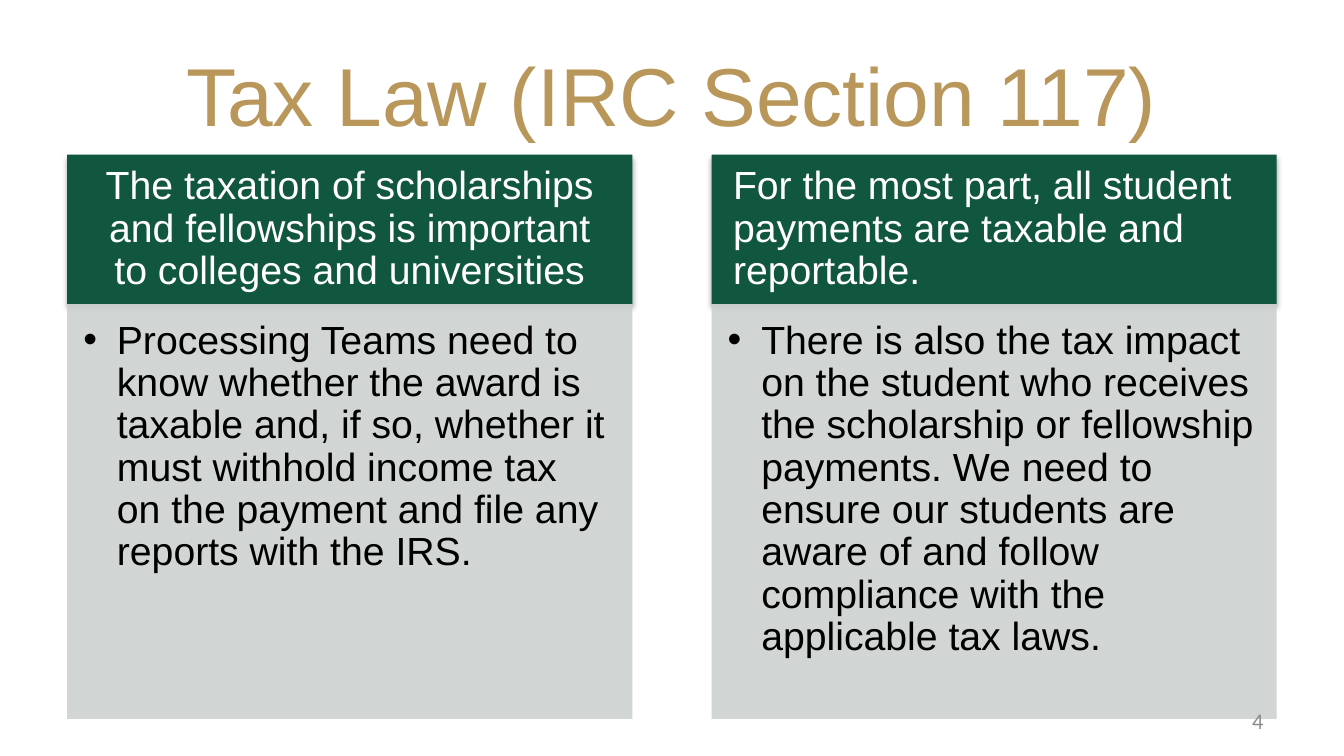
from collections import namedtuple

from lxml.etree import SubElement
from pptx import Presentation
from pptx.dml.color import RGBColor
from pptx.enum.shapes import MSO_SHAPE
from pptx.enum.text import MSO_ANCHOR, PP_ALIGN
from pptx.oxml.ns import qn
from pptx.util import Inches, Pt

Box = namedtuple("Box", "left top width height")

SLIDE_WIDTH = 10
SLIDE_HEIGHT = SLIDE_WIDTH * 9 / 16
MARGIN = 0.05 * SLIDE_WIDTH
CONTENT_WIDTH = SLIDE_WIDTH - 2 * MARGIN
GAP_SHARE = 0.14  # gap between columns, as a share of a column's width
COLUMN_WIDTH = CONTENT_WIDTH / (2 + GAP_SHARE)
COLUMN_STEP = COLUMN_WIDTH * (1 + GAP_SHARE)
COLUMN_TOP, COLUMN_HEIGHT = 1.15, 4.2
HEADING_SHARE = 0.265

GOLD, GREEN, PALE, GRAY = "B9975B", "115740", "CCD1CF", "8C8C8C"
WHITE, BLACK = "FFFFFF", "000000"

COLUMNS = [
    ("The taxation of scholarships and fellowships is important to colleges and universities",
     PP_ALIGN.CENTER,
     "Processing Teams need to know whether the award is taxable and, if so, whether it must "
     "withhold income tax on the payment and file any reports with the IRS."),
    ("For the most part, all student payments are taxable and reportable.",
     PP_ALIGN.LEFT,
     "There is also the tax impact on the student who receives the scholarship or fellowship "
     "payments. We need to ensure our students are aware of and follow compliance with the "
     "applicable tax laws."),
]


def color(hex_string):
    return RGBColor.from_string(hex_string)


def inches(box):
    return [Inches(length) for length in box]


def write(shape, text, size, hex_color, alignment, font="Arial",
          anchor=MSO_ANCHOR.MIDDLE, insets=(0.1, 0.05, 0.1, 0.05)):
    """Fill the shape with one styled paragraph and return that paragraph."""
    frame = shape.text_frame
    frame.text = text
    frame.word_wrap = True
    frame.vertical_anchor = anchor
    (frame.margin_left, frame.margin_top,
     frame.margin_right, frame.margin_bottom) = inches(insets)
    paragraph = frame.paragraphs[0]
    paragraph.alignment = alignment
    run_font = paragraph.runs[0].font
    run_font.name, run_font.size = font, Pt(size)
    run_font.color.rgb = color(hex_color)
    return paragraph


def add_panel(slide, box, fill):
    panel = slide.shapes.add_shape(MSO_SHAPE.RECTANGLE, *inches(box))
    panel.shadow.inherit = False
    panel.fill.solid()
    panel.fill.fore_color.rgb = color(fill)
    panel.line.fill.background()
    return panel


def add_soft_shadow(shape):
    effects = shape.element.spPr.find(qn("a:effectLst"))
    shadow = SubElement(effects, qn("a:outerShdw"), blurRad=str(Pt(3.1)), dist=str(Pt(1.8)),
                        dir="5400000", rotWithShape="0")
    shadow_color = SubElement(shadow, qn("a:srgbClr"), val=BLACK)
    SubElement(shadow_color, qn("a:alpha"), val="35000")


def make_translucent(shape, percent):
    fill_color = shape.element.spPr.find(qn("a:solidFill")).find(qn("a:srgbClr"))
    SubElement(fill_color, qn("a:alpha"), val=str(percent * 1000))


def add_bullet(paragraph, indent):
    properties = paragraph._p.get_or_add_pPr()
    properties.set("marL", str(Inches(indent)))
    properties.set("indent", str(-Inches(indent)))
    SubElement(properties, qn("a:buFont"), typeface="Arial")
    SubElement(properties, qn("a:buChar"), char="•")


def add_text_line(slide, box, *text_style, **options):
    write(slide.shapes.add_textbox(*inches(box)), *text_style, **options)


def add_column(slide, box, heading, heading_alignment, detail):
    heading_height = HEADING_SHARE * box.height
    heading_panel = add_panel(slide, box._replace(height=heading_height), GREEN)
    add_soft_shadow(heading_panel)
    paragraph = write(heading_panel, heading, 21, WHITE, heading_alignment,
                      insets=(0.16, 0.09, 0.16, 0.09))
    paragraph.line_spacing = 0.9

    detail_box = box._replace(top=box.top + heading_height, height=box.height - heading_height)
    detail_panel = add_panel(slide, detail_box, PALE)
    make_translucent(detail_panel, 90)
    paragraph = write(detail_panel, detail, 21, BLACK, PP_ALIGN.LEFT,
                      anchor=MSO_ANCHOR.TOP, insets=(0.12, 0.12, 0.17, 0.18))
    paragraph.line_spacing = 0.9
    add_bullet(paragraph, 0.25)


def main():
    presentation = Presentation()
    presentation.slide_width = Inches(SLIDE_WIDTH)
    presentation.slide_height = Inches(SLIDE_HEIGHT)
    slide = presentation.slides.add_slide(presentation.slide_layouts[6])

    add_text_line(slide, Box(MARGIN, 0.23, CONTENT_WIDTH, 0.94),
                  "Tax Law (IRC Section 117)", 44, GOLD, PP_ALIGN.CENTER)
    for index, content in enumerate(COLUMNS):
        column_box = Box(MARGIN + index * COLUMN_STEP, COLUMN_TOP, COLUMN_WIDTH, COLUMN_HEIGHT)
        add_column(slide, column_box, *content)
    number_width = 2.33
    add_text_line(slide, Box(SLIDE_WIDTH - MARGIN - number_width, 5.21, number_width, 0.3),
                  "4", 12, GRAY, PP_ALIGN.RIGHT, font="Calibri")

    presentation.save("out.pptx")


if __name__ == "__main__":
    main()
